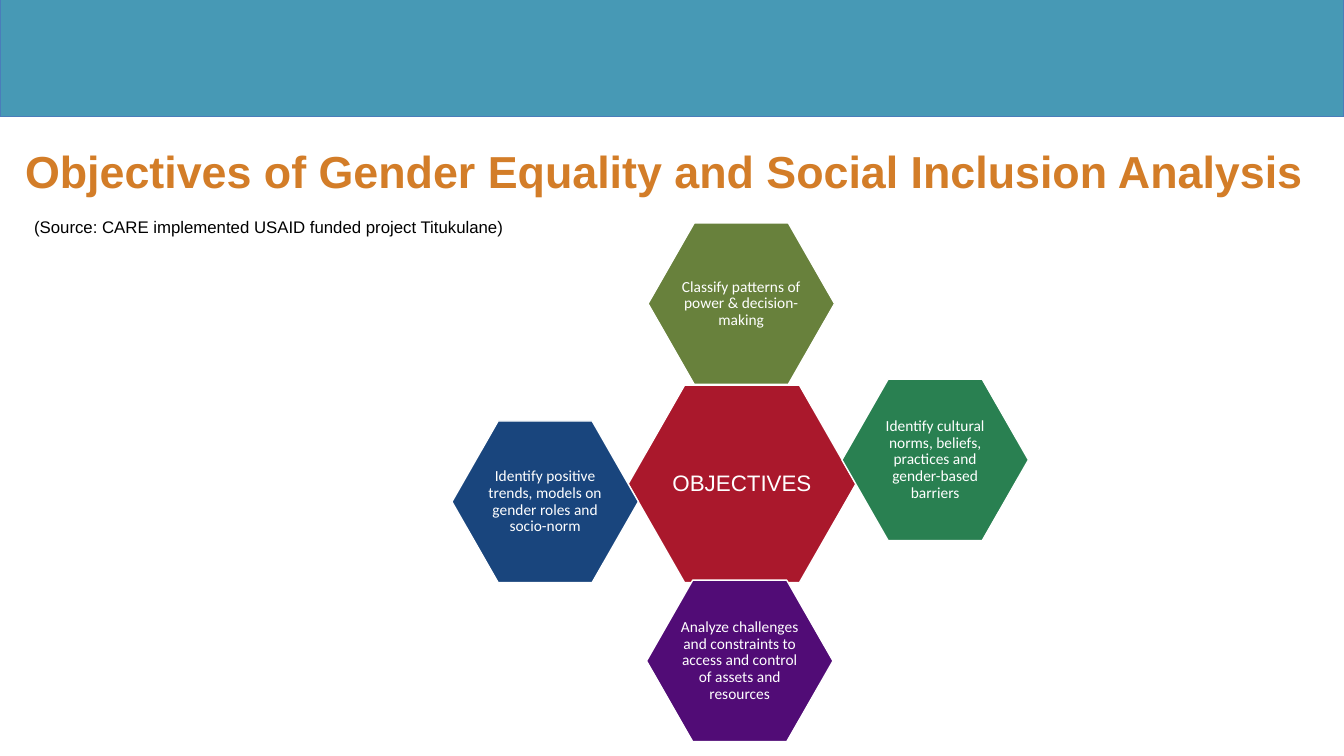
from dataclasses import dataclass

from pptx import Presentation
from pptx.dml.color import RGBColor
from pptx.enum.shapes import MSO_SHAPE
from pptx.enum.text import MSO_ANCHOR, PP_ALIGN
from pptx.slide import Slide
from pptx.text.text import Font
from pptx.util import Pt


@dataclass(frozen=True)
class Hex:
    text: str
    left: float
    top: float
    fill: str
    width: float = 133.2
    height: float = 115.4
    size: float = 11
    face: str = "Calibri"


@dataclass(frozen=True)
class Label:
    text: str
    left: float
    top: float
    width: float
    height: float
    size: float
    color: str
    bold: bool = False
    foot: float = 3.6


CELLS = [
    Hex("OBJECTIVES", 448.7, 275.2, "AA182C", 162.7, 141, 16, "Arial"),
    Hex("Classify patterns of power & decision-making", 462.9, 159.2, "68813C"),
    Hex("Identify cultural norms, beliefs, practices and gender-based barriers",
        601.4, 270.8, "298051"),
    Hex("Identify positive trends, models on gender roles and socio-norm",
        322.8, 300.7, "19457D"),
    Hex("Analyze challenges and constraints to access and control of assets "
        "and resources", 461.8, 414.4, "510C76"),
]
LABELS = [
    Label("Objectives of Gender Equality and Social Inclusion Analysis",
          10.8, 95.8, 937.4, 48.2, 32, "D37D28", True, 0),
    Label("(Source: CARE implemented USAID funded project Titukulane)",
          17.3, 151.2, 535, 21.6, 12, "000000"),
]


def color(code: str) -> RGBColor:
    return RGBColor.from_string(code)


def style(font: Font, face: str, size: float, code: str, bold: bool = False) -> None:
    font.name = face
    font.size = Pt(size)
    font.bold = bold
    font.color.rgb = color(code)


def draw_band(slide: Slide) -> None:
    band = slide.shapes.add_shape(MSO_SHAPE.RECTANGLE, 0, 0, Pt(960), Pt(83.5))
    band.shadow.inherit = False
    band.fill.solid()
    band.fill.fore_color.rgb = color("4799B5")
    band.line.color.rgb = color("4A7DBA")
    band.line.width = Pt(0.75)


def draw_hex(slide: Slide, cell: Hex) -> None:
    shape = slide.shapes.add_shape(
        MSO_SHAPE.HEXAGON, Pt(cell.left), Pt(cell.top), Pt(cell.width), Pt(cell.height))
    shape.adjustments[0] = 0.286
    shape.shadow.inherit = False
    shape.fill.solid()
    shape.fill.fore_color.rgb = color(cell.fill)
    shape.line.color.rgb = color("FFFFFF")
    shape.line.width = Pt(1)
    frame = shape.text_frame
    frame.word_wrap = True
    frame.vertical_anchor = MSO_ANCHOR.MIDDLE
    frame.margin_left = frame.margin_right = Pt(1.4)
    frame.margin_top = frame.margin_bottom = Pt(1.4)
    para = frame.paragraphs[0]
    para.text = cell.text
    para.alignment = PP_ALIGN.CENTER
    para.line_spacing = 0.9
    style(para.font, cell.face, cell.size, "FFFFFF")


def draw_label(slide: Slide, label: Label) -> None:
    box = slide.shapes.add_textbox(
        Pt(label.left), Pt(label.top), Pt(label.width), Pt(label.height))
    frame = box.text_frame
    frame.word_wrap = True
    frame.vertical_anchor = MSO_ANCHOR.MIDDLE
    frame.margin_bottom = Pt(label.foot)
    para = frame.paragraphs[0]
    para.text = label.text
    style(para.font, "Arial", label.size, label.color, label.bold)


def main() -> None:
    deck = Presentation()
    deck.slide_width, deck.slide_height = Pt(960), Pt(540)
    slide = deck.slides.add_slide(deck.slide_layouts[6])
    draw_band(slide)
    for cell in CELLS:
        draw_hex(slide, cell)
    for label in LABELS:
        draw_label(slide, label)
    deck.save("out.pptx")


if __name__ == "__main__":
    main()
